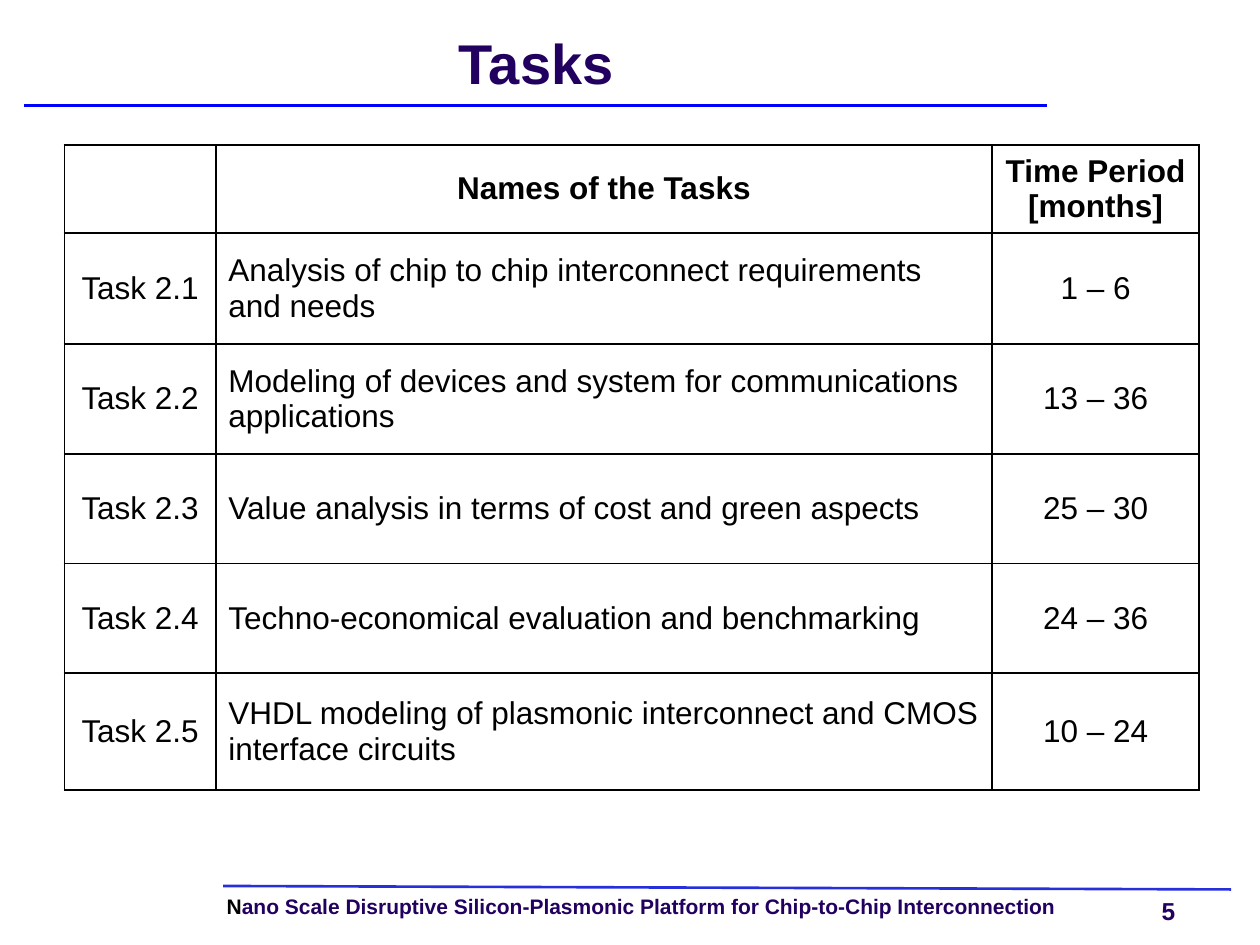
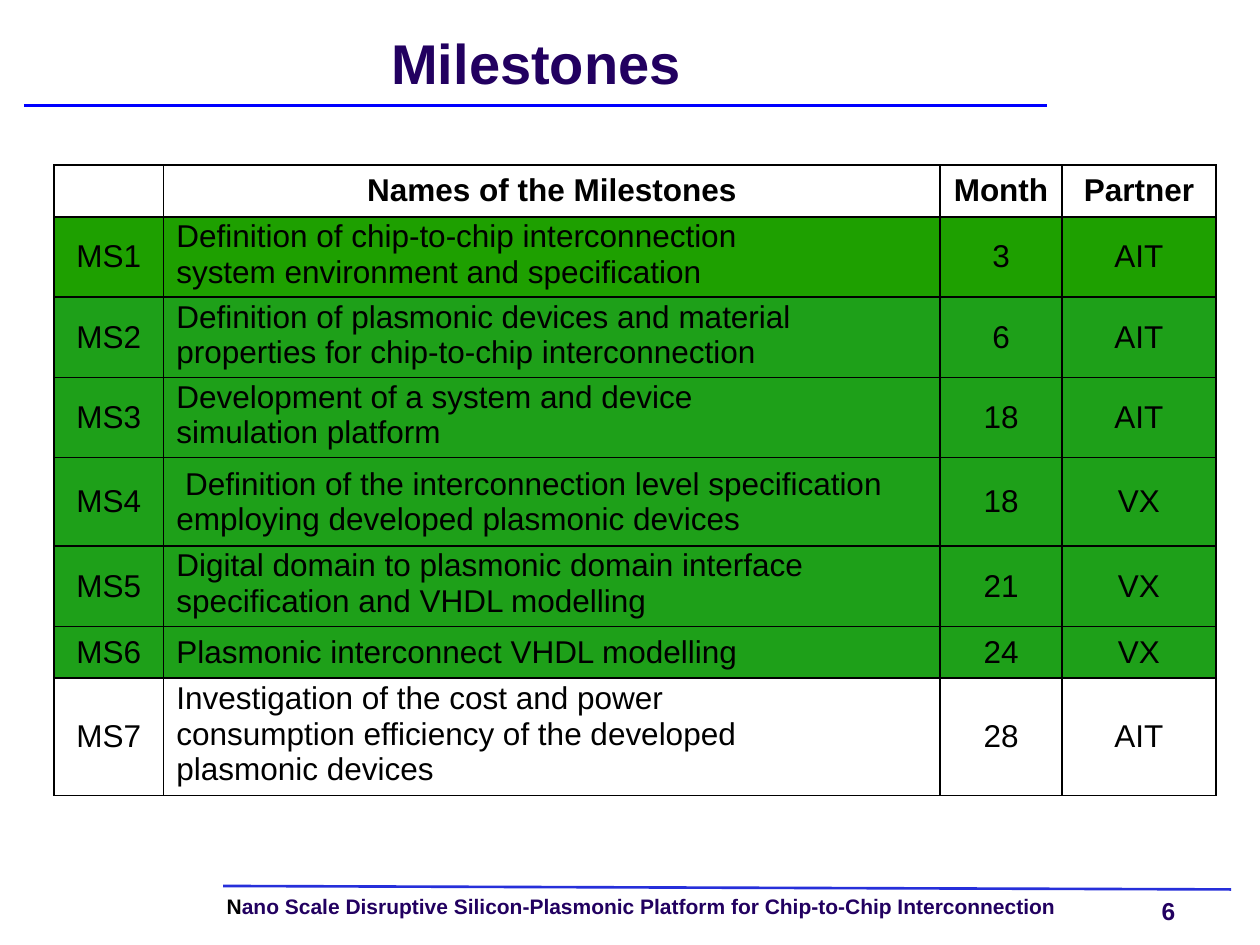
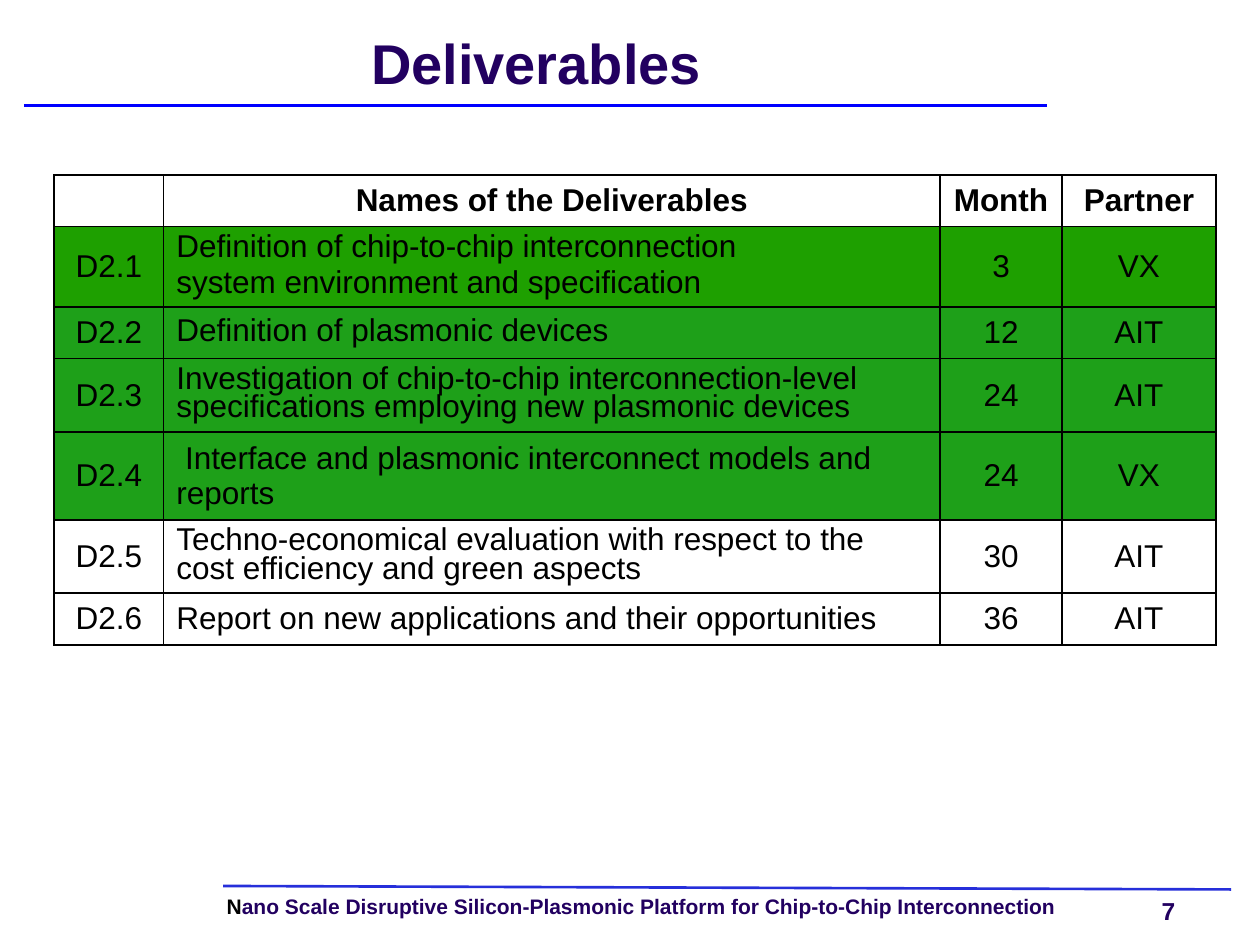
from lxml import etree
from pptx import Presentation
from pptx.dml.color import RGBColor
from pptx.enum.shapes import MSO_CONNECTOR
from pptx.enum.text import MSO_ANCHOR, MSO_AUTO_SIZE, PP_ALIGN
from pptx.oxml.ns import qn
from pptx.util import Cm, Pt

STRAIGHT = MSO_CONNECTOR.STRAIGHT
MIDDLE = MSO_ANCHOR.MIDDLE
LEFT, CENTER = PP_ALIGN.LEFT, PP_ALIGN.CENTER
NO_AUTOSIZE = MSO_AUTO_SIZE.NONE

BLACK = RGBColor(0x00, 0x00, 0x00)
PURPLE = RGBColor(0x22, 0x00, 0x60)
TITLE_BLUE = RGBColor(0x00, 0x00, 0xFF)
FOOTER_BLUE = RGBColor(0x26, 0x2F, 0xDA)
FIRST_GREEN = RGBColor(0x1E, 0xA0, 0x00)
GREEN = RGBColor(0x1E, 0xA0, 0x19)

FONT = "Arial"
FIRST_PAGE = 5
TITLE_BOX = (0.51, 0.51, 20.6, 1.7)
FOOTER_BOX = (4.5, 17.86, 20.32, 0.66)
SIMPLE_ROW = 1.04

TASK_COLUMNS = (3.05, 15.65, 4.17)
TASK_ROWS = (1.6, 2.24, 2.21, 2.21, 2.21, 2.36)
RESULT_COLUMNS = (2.21, 15.65, 2.46, 3.1)

TASKS = (
    ("", "Names of the Tasks", "Time Period [months]"),
    ("Task 2.1", "Analysis of chip to chip interconnect requirements and needs", "1 – 6"),
    ("Task 2.2", "Modeling of devices and system for communications applications", "13 – 36"),
    ("Task 2.3", "Value analysis in terms of cost and green aspects", "25 – 30"),
    ("Task 2.4", "Techno-economical evaluation and benchmarking", "24 – 36"),
    ("Task 2.5", "VHDL modeling of plasmonic interconnect and CMOS interface circuits", "10 – 24"),
)
MILESTONES = (
    ("", "Names of the Milestones", "Month", "Partner"),
    ("MS1", ["Definition of chip-to-chip interconnection",
             "system environment and specification"], "3", "AIT"),
    ("MS2", ["Definition of plasmonic devices and material",
             "properties for chip-to-chip interconnection"], "6", "AIT"),
    ("MS3", ["Development of a system and device",
             "simulation platform"], "18", "AIT"),
    ("MS4", " Definition of the interconnection level specification "
            "employing developed plasmonic devices", "18", "VX"),
    ("MS5", ["Digital domain to plasmonic domain interface",
             "specification and VHDL modelling"], "21", "VX"),
    ("MS6", "Plasmonic interconnect VHDL modelling", "24", "VX"),
    ("MS7", ["Investigation of the cost and power",
             "consumption efficiency of the developed",
             "plasmonic devices"], "28", "AIT"),
)
DELIVERABLES = (
    ("", "Names of the Deliverables", "Month", "Partner"),
    ("D2.1", ["Definition of chip-to-chip interconnection",
              "system environment and specification"], "3", "VX"),
    ("D2.2", ["Definition of plasmonic devices"], "12", "AIT"),
    ("D2.3", ["Investigation of chip-to-chip interconnection-level "
              "specifications employing new plasmonic devices"], "24", "AIT"),
    ("D2.4", " Interface and plasmonic interconnect models and reports", "24", "VX"),
    ("D2.5", ["Techno-economical evaluation with respect to the "
              "cost efficiency and green aspects"], "30", "AIT"),
    ("D2.6", "Report on new applications and their opportunities", "36", "AIT"),
)


def add_run(paragraph, text, size, color, bold=True):
    run = paragraph.add_run()
    run.text = text
    run.font.name = FONT
    run.font.size = Pt(size)
    run.font.bold = bold
    run.font.color.rgb = color


def clear_margins(frame):
    frame.margin_left = frame.margin_right = 0
    frame.margin_top = frame.margin_bottom = 0


def add_line(slide, start, end, color):
    line = slide.shapes.add_connector(STRAIGHT, *map(Cm, start + end))
    line.line.color.rgb = color
    line.line.width = Pt(1.5)
    etree.SubElement(line._element.spPr, qn("a:effectLst"))


def add_text_box(slide, box, wrap):
    frame = slide.shapes.add_textbox(*map(Cm, box)).text_frame
    clear_margins(frame)
    frame.word_wrap = wrap
    return frame.paragraphs[0]


def add_title(slide, text, box):
    left, top, width, height = box
    title = slide.shapes.title
    title.left, title.top, title.width, title.height = map(Cm, box)
    frame = title.text_frame
    clear_margins(frame)
    frame.auto_size = NO_AUTOSIZE
    frame.vertical_anchor = MIDDLE
    paragraph = frame.paragraphs[0]
    paragraph.alignment = CENTER
    paragraph.line_spacing = Pt(32)
    add_run(paragraph, text, 32, PURPLE)
    rule = top + height - 0.08
    add_line(slide, (left - 0.03, rule), (left + width, rule), TITLE_BLUE)


def add_footer(slide, page, box):
    left, top, width, height = box
    add_line(slide, (left, top), (left + width, top + 0.07), FOOTER_BLUE)
    project = add_text_box(slide, (left + 0.07, top + 0.2, 18.14, height - 0.2), True)
    project.line_spacing = 0.9
    add_run(project, "N", 12, BLACK)
    add_run(project, "ano Scale Disruptive Silicon-Plasmonic Platform for "
                     "Chip-to-Chip Interconnection", 12, PURPLE)
    number = add_text_box(slide, (left + 18.92, top + 0.2, 0.61, 0.58), False)
    add_run(number, str(page), 14, PURPLE)


def add_borders(cell):
    properties = cell._tc.get_or_add_tcPr()
    for index, side in enumerate(("lnL", "lnR", "lnT", "lnB")):
        border = etree.Element(qn(f"a:{side}"), w=str(Pt(1)))
        fill = etree.SubElement(border, qn("a:solidFill"))
        etree.SubElement(fill, qn("a:srgbClr"), val=str(BLACK))
        properties.insert(index, border)


def fill_cell(cell, content, alignment, bold, color):
    cell.vertical_anchor = MIDDLE
    if color is None:
        cell.fill.background()
    else:
        cell.fill.solid()
        cell.fill.fore_color.rgb = color
    add_borders(cell)
    if not content:
        return
    tight = isinstance(content, list)
    frame = cell.text_frame
    for index, text in enumerate(content if tight else [content]):
        paragraph = frame.add_paragraph() if index else frame.paragraphs[0]
        paragraph.alignment = alignment
        if tight:
            paragraph.line_spacing = 0.8
        if index:
            paragraph.space_before = Pt(4.1)
        add_run(paragraph, text, 18, BLACK, bold)


def row_color(row, completed):
    if not 1 <= row <= completed:
        return None
    return FIRST_GREEN if row == 1 else GREEN


def add_task_table(slide, rows, box, columns, heights, completed):
    left, top, height = map(Cm, box)
    shape = slide.shapes.add_table(
        len(rows), len(columns), left, top, Cm(sum(columns)), height)
    table = shape.table
    table.first_row = table.horz_banding = False
    for column, width in zip(table.columns, columns):
        column.width = Cm(width)
    for row, row_height in zip(table.rows, heights):
        row.height = Cm(row_height)
    shape.height = height
    for row, contents in enumerate(rows):
        for column, content in enumerate(contents):
            alignment = LEFT if row and column == 1 else CENTER
            fill_cell(table.cell(row, column), content, alignment,
                      row == 0, row_color(row, completed))


def main():
    presentation = Presentation()
    presentation.slide_width, presentation.slide_height = Cm(25.4), Cm(19.05)
    title_only = presentation.slide_layouts[5]
    pages = (
        ("Tasks", TASKS, (1.3, 2.92, 12.95), TASK_COLUMNS, TASK_ROWS, 0),
        ("Milestones", MILESTONES, (1.09, 3.33, 12.95), RESULT_COLUMNS,
         [SIMPLE_ROW] * len(MILESTONES), 6),
        ("Deliverables", DELIVERABLES, (1.09, 3.53, 9.47), RESULT_COLUMNS,
         [SIMPLE_ROW] * len(DELIVERABLES), 4),
    )
    for page, (title, *table_settings) in enumerate(pages, FIRST_PAGE):
        slide = presentation.slides.add_slide(title_only)
        add_title(slide, title, TITLE_BOX)
        add_footer(slide, page, FOOTER_BOX)
        add_task_table(slide, *table_settings)
    presentation.save("out.pptx")


if __name__ == "__main__":
    main()
